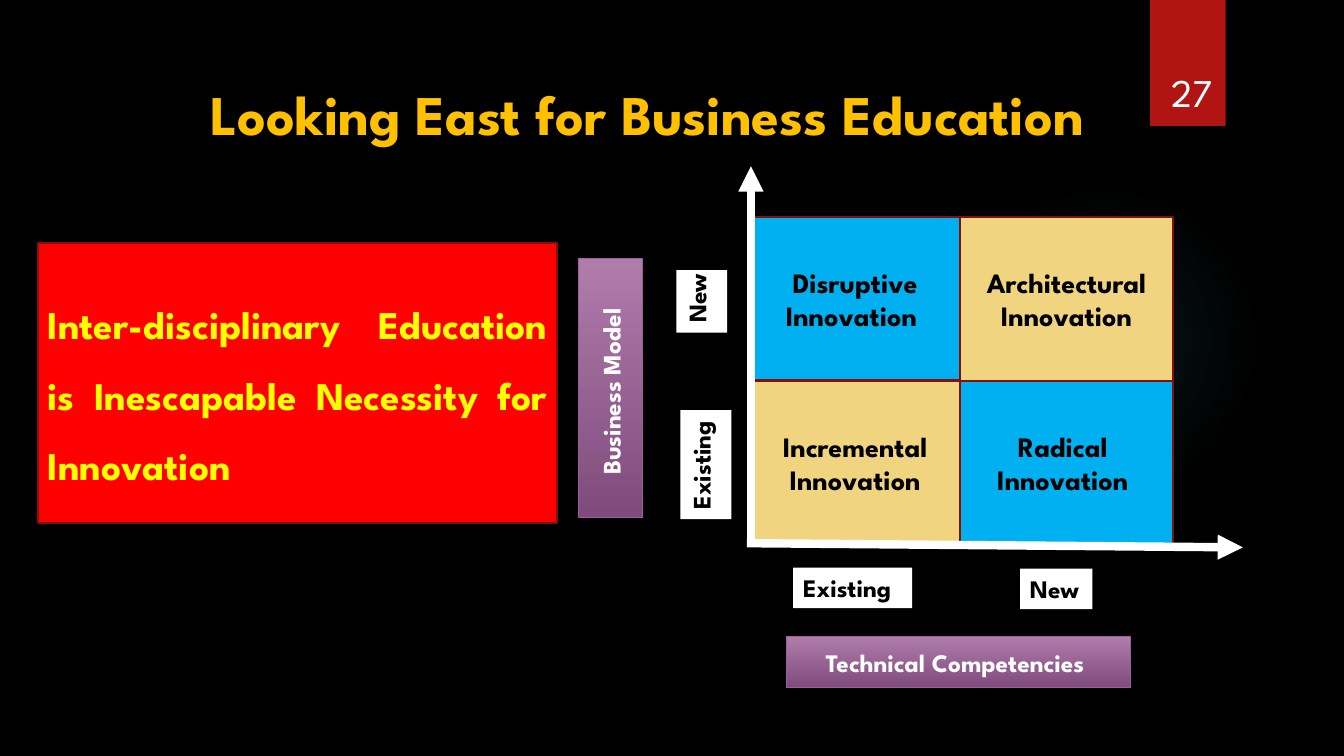
from lxml import etree
from pptx import Presentation
from pptx.dml.color import RGBColor
from pptx.enum.shapes import MSO_CONNECTOR, MSO_SHAPE as SHAPE
from pptx.enum.text import MSO_ANCHOR as ANCHOR, MSO_AUTO_SIZE as AUTO_SIZE, PP_ALIGN as ALIGN
from pptx.oxml import parse_xml
from pptx.oxml.ns import nsdecls, qn
from pptx.util import Pt

FONT = "League Spartan"
COLORS = {
    "black": "000000", "white": "FFFFFF", "glow": "50B9C1", "ribbon": "B01513",
    "blue": "00B0F0", "sand": "F0D47F", "border": "82100E", "red": "FF0000",
    "yellow": "FFFF00", "gold": "FFC000",
    "bar_top": "AF7CAC", "bar_bottom": "7F4B7C", "bar_line": "9E5E9B",
}


def rgb(name):
    return RGBColor.from_string(COLORS[name])


def write(shape, lines, size, color, bold=True, align=ALIGN.CENTER,
          anchor=ANCHOR.MIDDLE, wrap=True, vertical=False, spacing=None):
    frame = shape.text_frame
    frame.word_wrap = wrap
    frame.vertical_anchor = anchor
    if vertical:
        frame._txBody.bodyPr.set("vert", "vert270")
    font_format = {"name": FONT, "size": Pt(size), "bold": bold}
    for index, line in enumerate(lines):
        paragraph = frame.paragraphs[0] if index == 0 else frame.add_paragraph()
        paragraph.alignment = align
        paragraph.line_spacing = spacing
        run = paragraph.add_run()
        run.text = line
        for name, value in font_format.items():
            setattr(run.font, name, value)
        run.font.color.rgb = rgb(color)


def add_box(slide, box, fill=None, line=None, line_width=1.5, kind=SHAPE.RECTANGLE):
    shape = slide.shapes.add_shape(kind, *map(Pt, box))
    shape.shadow.inherit = False
    if fill:
        shape.fill.solid()
        shape.fill.fore_color.rgb = rgb(fill)
    if line:
        shape.line.color.rgb = rgb(line)
        shape.line.width = Pt(line_width)
    else:
        shape.line.fill.background()
    return shape


def add_text(slide, box, text, size, color, **options):
    write(slide.shapes.add_textbox(*map(Pt, box)), [text], size, color, **options)


def add_process(slide, box, fill, lines, size, color, **options):
    shape = add_box(slide, box, fill, "border", kind=SHAPE.FLOWCHART_PROCESS)
    write(shape, lines, size, color, **options)


def add_glow(slide, box):
    shape = add_box(slide, box, kind=SHAPE.OVAL)
    shape.fill.background()
    stops = "".join(
        f'<a:gs pos="{position}000"><a:srgbClr val="{COLORS["glow"]}">'
        f'<a:alpha val="{alpha}000"/></a:srgbClr></a:gs>'
        for position, alpha in ((0, 7), (36, 6), (69, 0)))
    gradient = parse_xml(
        f'<a:gradFill {nsdecls("a")}><a:gsLst>{stops}</a:gsLst><a:path path="circle">'
        '<a:fillToRect l="50000" t="50000" r="50000" b="50000"/></a:path></a:gradFill>')
    properties = shape.element.spPr
    properties.replace(properties.find(qn("a:noFill")), gradient)


def add_axis_title(slide, box, text, vertical=False):
    shape = add_box(slide, box, line="bar_line", line_width=0.75)
    shape.fill.gradient()
    shape.fill.gradient_angle = 270
    for stop, color in zip(shape.fill.gradient_stops, ("bar_top", "bar_bottom")):
        stop.color.rgb = rgb(color)
    write(shape, [text], 18, "white", vertical=vertical)


def add_axis_label(slide, box, text, vertical=False):
    shape = add_box(slide, box, "white")
    write(shape, [text], 18, "black", align=ALIGN.LEFT, anchor=ANCHOR.TOP,
          wrap=False, vertical=vertical)
    shape.text_frame.auto_size = AUTO_SIZE.SHAPE_TO_FIT_TEXT


def add_arrow(slide, points):
    arrow = slide.shapes.add_connector(MSO_CONNECTOR.STRAIGHT, *map(Pt, points))
    arrow.line.color.rgb = rgb("white")
    arrow.line.width = Pt(6)
    etree.SubElement(arrow.line._get_or_add_ln(), qn("a:tailEnd"), type="triangle")
    etree.SubElement(arrow._element.spPr, qn("a:effectLst"))


def add_matrix(slide):
    left, top, width, height = 534.5, 154.8, 152.6, 117.4
    quadrants = [
        (0, 0, "blue", ["Disruptive Innovation "]),
        (0, 1, "sand", ["Incremental Innovation"]),
        (1, 1, "blue", ["Radical ", "Innovation "]),
        (1, 0, "sand", ["Architectural Innovation"]),
    ]
    for column, row, fill, lines in quadrants:
        box = (left + column * 151, top + row * 117, width, height)
        add_process(slide, box, fill, lines, 20, "black")


def main():
    presentation = Presentation()
    presentation.slide_width, presentation.slide_height = Pt(960), Pt(540)
    slide = presentation.slides.add_slide(presentation.slide_layouts[6])
    slide.background.fill.solid()
    slide.background.fill.fore_color.rgb = rgb("black")

    # Backdrop and page number
    add_glow(slide, (677.5, 131.8, 221.8, 221.8))
    add_box(slide, (821.5, 0, 54, 90), "ribbon")
    add_text(slide, (743.8, 56.9, 216, 28.8), "27", 28, "white",
             bold=False, anchor=ANCHOR.BOTTOM)

    # Innovation matrix with its axes
    add_matrix(slide)
    add_arrow(slide, (536.4, 391, 536.4, 118.8))
    add_arrow(slide, (533.5, 388, 887.8, 391))
    add_axis_label(slide, (483.1, 193, 36.4, 44.6), "New", vertical=True)
    add_axis_label(slide, (728.6, 406.1, 51.8, 29), "New")
    add_axis_label(slide, (486, 293, 36.4, 77.8), "Existing", vertical=True)
    add_axis_label(slide, (566.6, 405.4, 85, 29), "Existing")
    add_axis_title(slide, (413.3, 185, 45.8, 185), "Business Model ", vertical=True)
    add_axis_title(slide, (561.6, 455, 246, 36.4), "Technical Competencies ")

    # Message and title
    add_process(slide, (27, 173.5, 371, 199.8), "red",
                ["Inter-disciplinary Education is Inescapable Necessity for Innovation "],
                28, "yellow", align=ALIGN.JUSTIFY, spacing=1.5)
    add_text(slide, (97.2, 53.3, 740.9, 110.2), "Looking East for Business Education ",
             40, "gold", anchor=ANCHOR.TOP)

    presentation.save("out.pptx")


if __name__ == "__main__":
    main()
